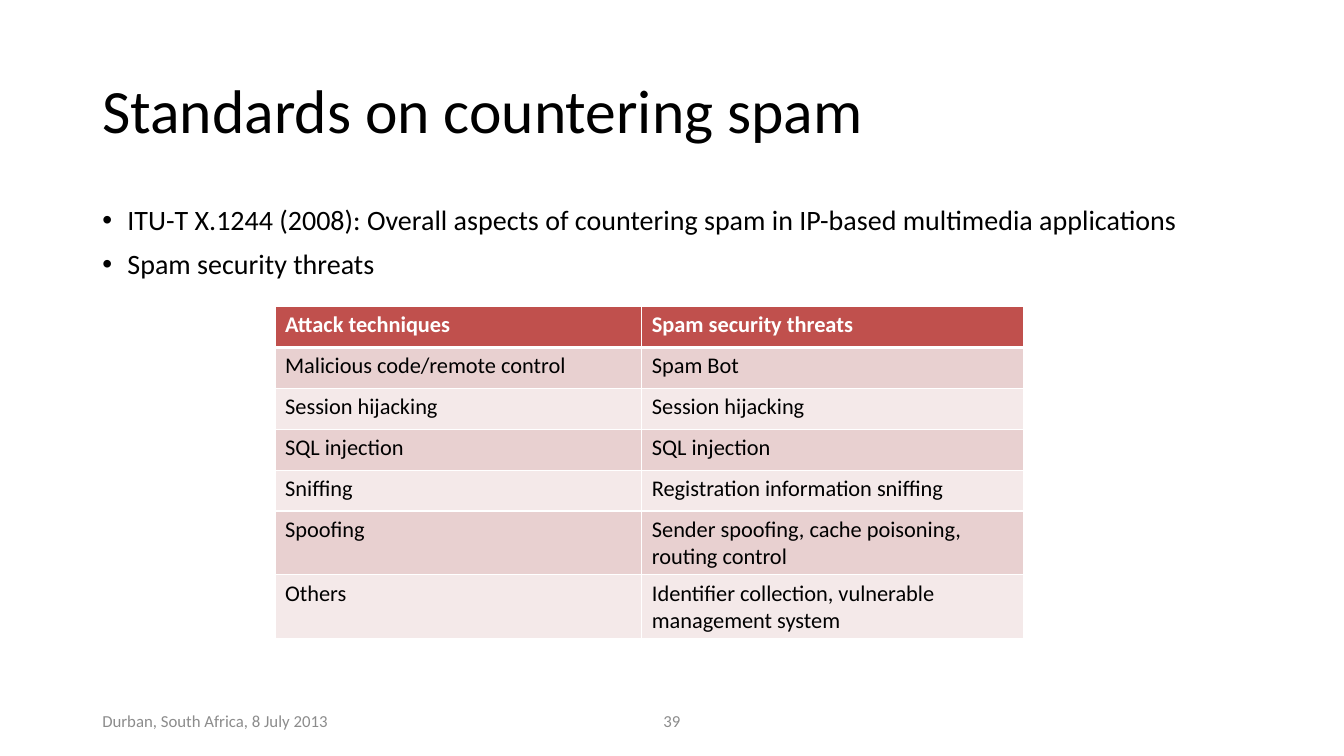
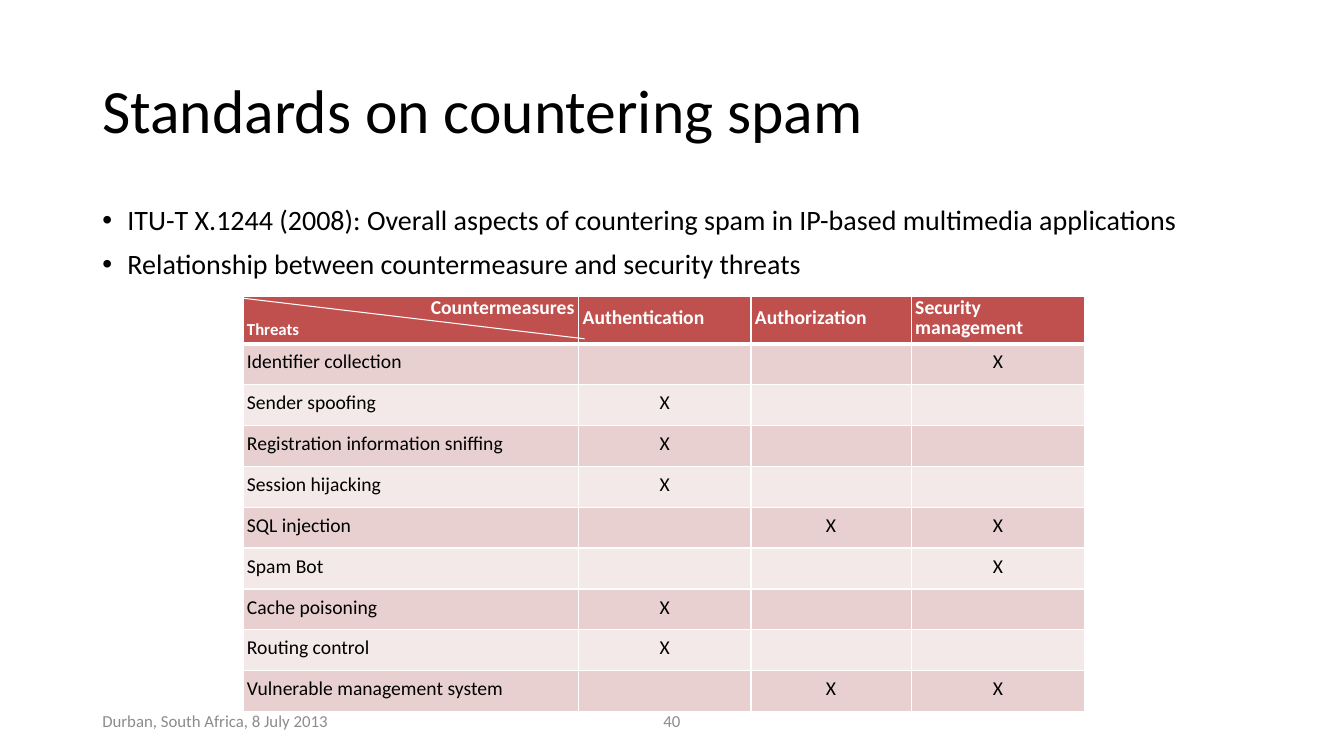
"""Build two slides on standards for countering spam."""
from dataclasses import dataclass

from lxml import etree
from pptx import Presentation
from pptx.dml.color import RGBColor
from pptx.enum.shapes import MSO_CONNECTOR
from pptx.enum.text import MSO_ANCHOR, PP_ALIGN
from pptx.oxml.ns import qn
from pptx.util import Pt

LEFT, MID, RIGHT = PP_ALIGN.LEFT, PP_ALIGN.CENTER, PP_ALIGN.RIGHT
TOP, CENTER = MSO_ANCHOR.TOP, MSO_ANCHOR.MIDDLE
STRAIGHT = MSO_CONNECTOR.STRAIGHT


@dataclass(frozen=True)
class Theme:
    """Hold the colours, font and type sizes of the deck."""

    font: str = "Calibri"
    ink: str = "000000"
    white: str = "FFFFFF"
    gray: str = "8C8C8C"
    head: str = "C0504D"
    bands: tuple = ("E8D0D0", "F4E9E9")
    title: int = 44
    body: int = 20
    cell: int = 16
    dense: int = 14
    small: int = 12


THEME = Theme()
EDGE = 66
WIDTH = 828
ROW = 29.2
TITLE = "Standards on countering spam"
PLACE = "Durban, South Africa, 8 July 2013"
NORM = "ITU-T X.1244 (2008): Overall aspects of countering spam in IP-based multimedia applications"

THREATS = [
    ("Attack techniques", "Spam security threats"),
    ("Malicious code/remote control", "Spam Bot"),
    ("Session hijacking", "Session hijacking"),
    ("SQL injection", "SQL injection"),
    ("Sniffing", "Registration information sniffing"),
    ("Spoofing", "Sender spoofing, cache poisoning, routing control"),
    ("Others", "Identifier collection, vulnerable management system"),
]
MARKS = [
    ("", "Authentication", "Authorization", "Security\nmanagement"),
    ("Identifier collection", "", "", "X"),
    ("Sender spoofing", "X", "", ""),
    ("Registration information sniffing", "X", "", ""),
    ("Session hijacking", "X", "", ""),
    ("SQL injection", "", "X", "X"),
    ("Spam Bot", "", "", "X"),
    ("Cache poisoning", "X", "", ""),
    ("Routing control", "X", "", ""),
    ("Vulnerable management system", "", "X", "X"),
]


def write(frame, text, size=THEME.body, color=THEME.ink, bold=False,
          align=LEFT, space=None, before=0, bullet=False):
    """Add each line of the text to the frame as a paragraph."""
    for line in text.split("\n"):
        first = not frame.text
        para = frame.paragraphs[0] if first else frame.add_paragraph()
        if bullet:
            props = para._p.get_or_add_pPr()
            props.set("marL", str(Pt(18)))
            props.set("indent", str(-Pt(18)))
            etree.SubElement(props, qn("a:buFont"), typeface="Arial")
            etree.SubElement(props, qn("a:buChar"), char="•")
        para.alignment = align
        para.line_spacing = space
        para.space_before = Pt(0 if first else before)
        run = para.add_run()
        run.text = line
        run.font.name = THEME.font
        run.font.size = Pt(size)
        run.font.bold = bold
        run.font.color.rgb = RGBColor.from_string(color)


def add_box(slide, left, top, width, height, anchor=CENTER):
    """Add a wrapping text box and return its frame."""
    box = slide.shapes.add_textbox(Pt(left), Pt(top), Pt(width), Pt(height))
    frame = box.text_frame
    frame.word_wrap = True
    frame.vertical_anchor = anchor
    return frame


def paint(cell, color, base=1):
    """Give a cell its white borders and its fill."""
    props = cell._tc.get_or_add_tcPr()
    for side, width in (("L", 1), ("R", 1), ("T", 1), ("B", base)):
        line = etree.SubElement(props, qn(f"a:ln{side}"), w=str(Pt(width)))
        fill = etree.SubElement(line, qn("a:solidFill"))
        etree.SubElement(fill, qn("a:srgbClr"), val=THEME.white)
    cell.fill.solid()
    cell.fill.fore_color.rgb = RGBColor.from_string(color)


def add_grid(slide, left, top, widths, rows, size, dense=False):
    """Add a banded table with a header row and return it."""
    shape = slide.shapes.add_table(len(rows), len(widths), Pt(left), Pt(top),
                                   Pt(sum(widths)), Pt(ROW * len(rows)))
    grid = shape.table
    for col, width in zip(grid.columns, widths):
        col.width = Pt(width)
    for i, row in enumerate(rows):
        grid.rows[i].height = Pt(ROW)
        head = i == 0
        for j, text in enumerate(row):
            cell = grid.cell(i, j)
            paint(cell, THEME.head if head else THEME.bands[(i - 1) % 2],
                  3 if head else 1)
            if dense:
                cell.vertical_anchor = CENTER
                cell.margin_left = cell.margin_right = Pt(2.9)
                cell.margin_top = cell.margin_bottom = Pt(2.9)
            if text:
                write(cell.text_frame, text, size=size, bold=head,
                      color=THEME.white if head else THEME.ink,
                      align=MID if text == "X" else LEFT,
                      space=Pt(14) if dense else None)
    return grid


def add_line(slide, start, end):
    """Draw a thin white line between two points."""
    line = slide.shapes.add_connector(STRAIGHT, *map(Pt, start + end))
    line.line.color.rgb = RGBColor.from_string(THEME.white)
    line.line.width = Pt(0.75)
    etree.SubElement(line._element.spPr, qn("a:effectLst"))


def add_page(deck, number, topic):
    """Add a slide with title, bullets and footer."""
    slide = deck.slides.add_slide(deck.slide_layouts[6])
    write(add_box(slide, EDGE, 28.8, WIDTH, 104.4), TITLE,
          size=THEME.title, space=0.9)
    write(add_box(slide, EDGE, 500.5, 216, 28.8), PLACE,
          size=THEME.small, color=THEME.gray)
    write(add_box(slide, 318, 500.5, 324, 28.8), str(number),
          size=THEME.small, color=THEME.gray, align=MID)
    write(add_box(slide, EDGE, 143.8, WIDTH, 342.6, TOP), f"{NORM}\n{topic}",
          space=0.9, before=10, bullet=True)
    return slide


def main():
    """Build and save the deck."""
    deck = Presentation()
    deck.slide_width, deck.slide_height = Pt(960), Pt(540)

    slide = add_page(deck, 39, "Spam security threats")
    add_grid(slide, 196.5, 219, (262, 273), THREATS, THEME.cell)

    slide = add_page(
        deck, 40, "Relationship between countermeasure and security threats")
    grid = add_grid(slide, 173.5, 211.7, (239.8, 123.1, 114.5, 123.8), MARKS,
                    THEME.dense, dense=True)
    frame = grid.cell(0, 0).text_frame
    look = {"color": THEME.white, "bold": True, "space": Pt(14)}
    write(frame, "Countermeasures", size=THEME.dense, align=RIGHT, **look)
    write(frame, "Threats", size=THEME.small, **look)
    add_line(slide, (417.6, 242), (173.5, 213))

    deck.save("out.pptx")


if __name__ == "__main__":
    main()
